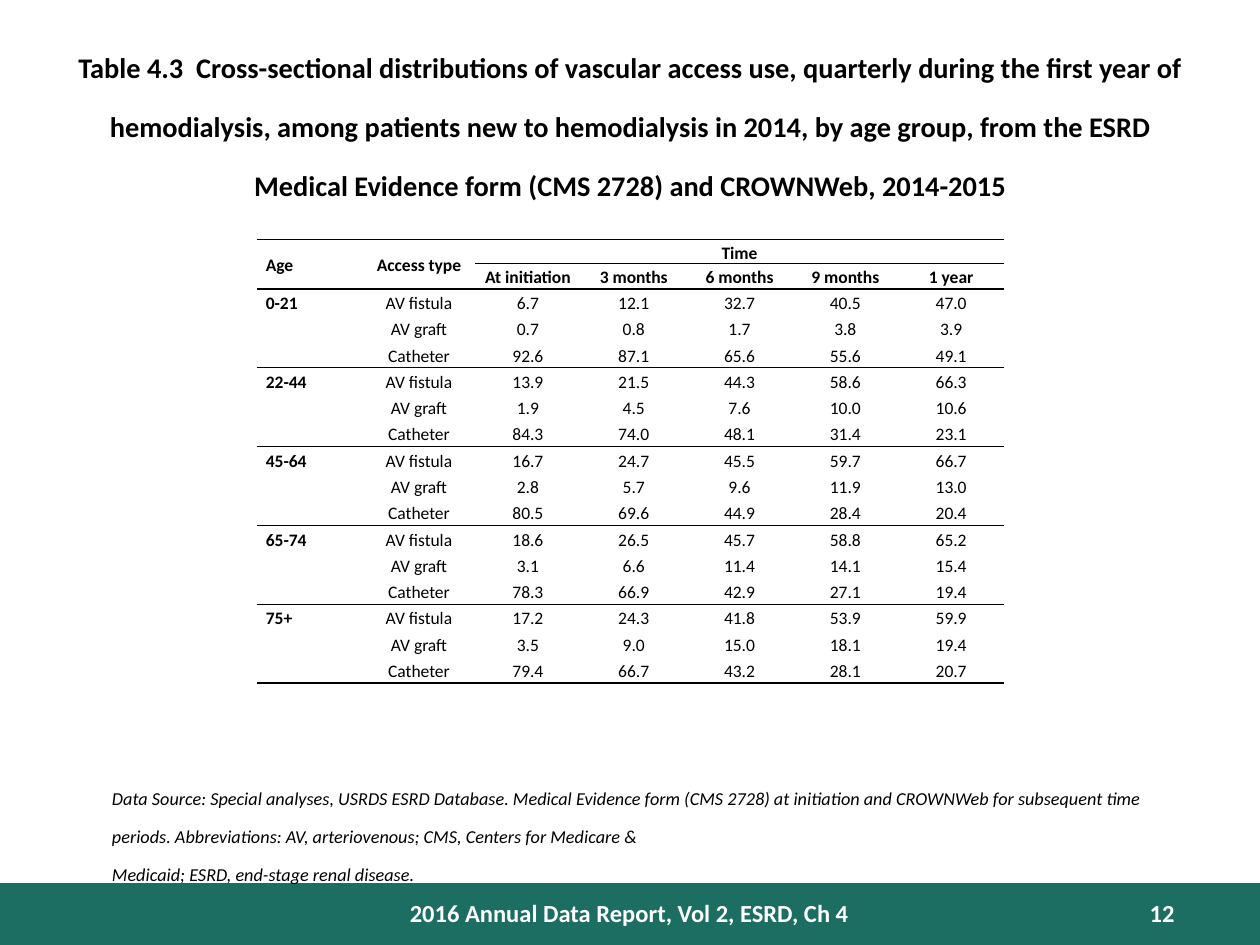
"""Build a slide with a table of vascular access use by age group."""
import dataclasses

import lxml.etree
import pptx
import pptx.dml.color
import pptx.enum.shapes
import pptx.enum.text
import pptx.oxml.ns
import pptx.util

Inches = pptx.util.Inches
ALIGN = pptx.enum.text.PP_ALIGN
ANCHOR = pptx.enum.text.MSO_ANCHOR

TITLE = (
    "Table 4.3  Cross-sectional distributions of vascular access use, quarterly during the "
    "first year of hemodialysis, among patients new to hemodialysis in 2014, by age group, "
    "from the ESRD Medical Evidence form (CMS 2728) and CROWNWeb, 2014-2015"
)
SOURCE_NOTES = [
    "Data Source: Special analyses, USRDS ESRD Database. Medical Evidence form (CMS 2728) at "
    "initiation and CROWNWeb for subsequent time periods. Abbreviations: AV, arteriovenous; "
    "CMS, Centers for Medicare &",
    "Medicaid; ESRD, end-stage renal disease.",
]
REPORT = "2016 Annual Data Report, Vol 2, ESRD, Ch 4"
PAGE = "12"
HEADER = [
    ["Age", "Access type", "Time", "", "", "", ""],
    ["", "", "At initiation", "3 months", "6 months", "9 months", "1 year"],
]
ACCESS_TYPES = ["AV fistula", "AV graft", "Catheter"]
AGE_GROUPS = {
    "0-21": [
        (6.7, 12.1, 32.7, 40.5, 47.0),
        (0.7, 0.8, 1.7, 3.8, 3.9),
        (92.6, 87.1, 65.6, 55.6, 49.1),
    ],
    "22-44": [
        (13.9, 21.5, 44.3, 58.6, 66.3),
        (1.9, 4.5, 7.6, 10.0, 10.6),
        (84.3, 74.0, 48.1, 31.4, 23.1),
    ],
    "45-64": [
        (16.7, 24.7, 45.5, 59.7, 66.7),
        (2.8, 5.7, 9.6, 11.9, 13.0),
        (80.5, 69.6, 44.9, 28.4, 20.4),
    ],
    "65-74": [
        (18.6, 26.5, 45.7, 58.8, 65.2),
        (3.1, 6.6, 11.4, 14.1, 15.4),
        (78.3, 66.9, 42.9, 27.1, 19.4),
    ],
    "75+": [
        (17.2, 24.3, 41.8, 53.9, 59.9),
        (3.5, 9.0, 15.0, 18.1, 19.4),
        (79.4, 66.7, 43.2, 28.1, 20.7),
    ],
}
COLUMN_WIDTHS = [0.84, 0.89] + [0.84] * 5
HEADER_HEIGHTS = [0.19, 0.2]
BODY_HEIGHT = 3.13
NO_STYLE = "{2D5ABB26-0587-4C30-8999-92F81FD0307C}"


@dataclasses.dataclass(frozen=True)
class Theme:
    """Colours and type sizes."""

    font: str = "Calibri"
    ink: str = "000000"
    paper: str = "FFFFFF"
    bar: str = "1C6E62"
    title: int = 28
    note: int = 18
    footer: int = 14
    cell: int = 10
    raised: int = 30000


THEME = Theme()


def rgb(colour):
    """Return a colour object."""
    return pptx.dml.color.RGBColor.from_string(colour)


def add_text(paragraph, text, size, colour=THEME.ink, bold=False, italic=False, raised=False):
    """Add one formatted run."""
    run = paragraph.add_run()
    run.text = text
    run.font.name = THEME.font
    run.font.size = pptx.util.Pt(size)
    run.font.bold = bold
    run.font.italic = italic
    run.font.color.rgb = rgb(colour)
    if raised:
        run.font._element.set("baseline", str(THEME.raised))


def add_box(slide, box, lines, align, **style):
    """Add a text box with one paragraph for each line."""
    frame = slide.shapes.add_textbox(*map(Inches, box)).text_frame
    frame.word_wrap = True
    for index, line in enumerate(lines):
        paragraph = frame.add_paragraph() if index else frame.paragraphs[0]
        paragraph.alignment = align
        add_text(paragraph, line, **style)


def add_border(cell, side):
    """Draw a thin rule on one side of a cell."""
    qn = pptx.oxml.ns.qn
    properties = cell._tc.get_or_add_tcPr()
    line = lxml.etree.SubElement(properties, qn(f"a:ln{side}"), w=str(pptx.util.Pt(1)))
    fill = lxml.etree.SubElement(line, qn("a:solidFill"))
    lxml.etree.SubElement(fill, qn("a:srgbClr"), val=THEME.ink)


def format_cell(cell, text, row, column):
    """Write and format one table cell."""
    header = row < len(HEADER)
    if row == 0:
        add_border(cell, "T")
    if header or (row - len(HEADER)) % len(ACCESS_TYPES) == len(ACCESS_TYPES) - 1:
        add_border(cell, "B")
    if column < 2 and not header:
        cell.fill.solid()
        cell.fill.fore_color.rgb = rgb(THEME.paper)
    else:
        cell.fill.background()
    cell.margin_left = cell.margin_right = Inches(0.07)
    cell.margin_top = cell.margin_bottom = 0
    cell.vertical_anchor = ANCHOR.MIDDLE
    paragraph = cell.text_frame.paragraphs[0]
    paragraph.alignment = ALIGN.CENTER if column else ALIGN.LEFT
    paragraph.line_spacing = 1.15
    if text:
        add_text(paragraph, text, THEME.cell, bold=header or column == 0)
    else:
        tag = pptx.oxml.ns.qn("a:endParaRPr")
        lxml.etree.SubElement(paragraph._p, tag, sz=str(THEME.cell * 100))


def add_access_table(slide):
    """Add the table of access use."""
    body = [
        [age if index == 0 else "", ACCESS_TYPES[index]] + [f"{value:.1f}" for value in values]
        for age, group in AGE_GROUPS.items()
        for index, values in enumerate(group)
    ]
    rows = HEADER + body
    heights = HEADER_HEIGHTS + [BODY_HEIGHT / len(body)] * len(body)
    size = (sum(COLUMN_WIDTHS), sum(heights))
    frame = slide.shapes.add_table(
        len(rows), len(COLUMN_WIDTHS), *map(Inches, (2.04, 1.9, *size))
    )
    table = frame.table
    table.first_row = table.horz_banding = False
    table._tbl.tblPr.find(pptx.oxml.ns.qn("a:tableStyleId")).text = NO_STYLE
    for column, width in zip(table.columns, COLUMN_WIDTHS):
        column.width = Inches(width)
    for row_index, texts in enumerate(rows):
        table.rows[row_index].height = Inches(heights[row_index])
        for column_index, text in enumerate(texts):
            format_cell(table.cell(row_index, column_index), text, row_index, column_index)
    for first, last in [((0, 0), (1, 0)), ((0, 1), (1, 1)), ((0, 2), (0, 6))]:
        table.cell(*first).merge(table.cell(*last))


def main():
    """Build and save the slide."""
    presentation = pptx.Presentation()
    presentation.slide_width, presentation.slide_height = Inches(10), Inches(7.5)
    slide = presentation.slides.add_slide(presentation.slide_layouts.get_by_name("Title Only"))

    title = slide.shapes.title
    title.left, title.top, title.width, title.height = map(Inches, (0.5, 0.3, 9, 1.25))
    title.text_frame.auto_size = pptx.enum.text.MSO_AUTO_SIZE.NONE
    title.text_frame.vertical_anchor = ANCHOR.TOP
    title.text_frame.paragraphs[0].alignment = ALIGN.CENTER
    add_text(title.text_frame.paragraphs[0], TITLE, THEME.title, bold=True, raised=True)

    bar = slide.shapes.add_shape(
        pptx.enum.shapes.MSO_SHAPE.RECTANGLE, *map(Inches, (0, 7.01, 10, 0.49))
    )
    bar.shadow.inherit = False
    bar.fill.solid()
    bar.fill.fore_color.rgb = rgb(THEME.bar)
    bar.line.fill.background()

    footer = {"size": THEME.footer, "colour": THEME.paper, "bold": True}
    add_box(slide, (8.42, 7.08, 1, 0.3), [PAGE], ALIGN.RIGHT, **footer)
    add_box(slide, (0.79, 6.17, 8.42, 0.71), SOURCE_NOTES, ALIGN.LEFT,
            size=THEME.note, italic=True, raised=True)
    add_box(slide, (3.08, 7.08, 3.83, 0.33), [REPORT], ALIGN.CENTER, **footer)
    add_access_table(slide)
    presentation.save("out.pptx")


if __name__ == "__main__":
    main()
